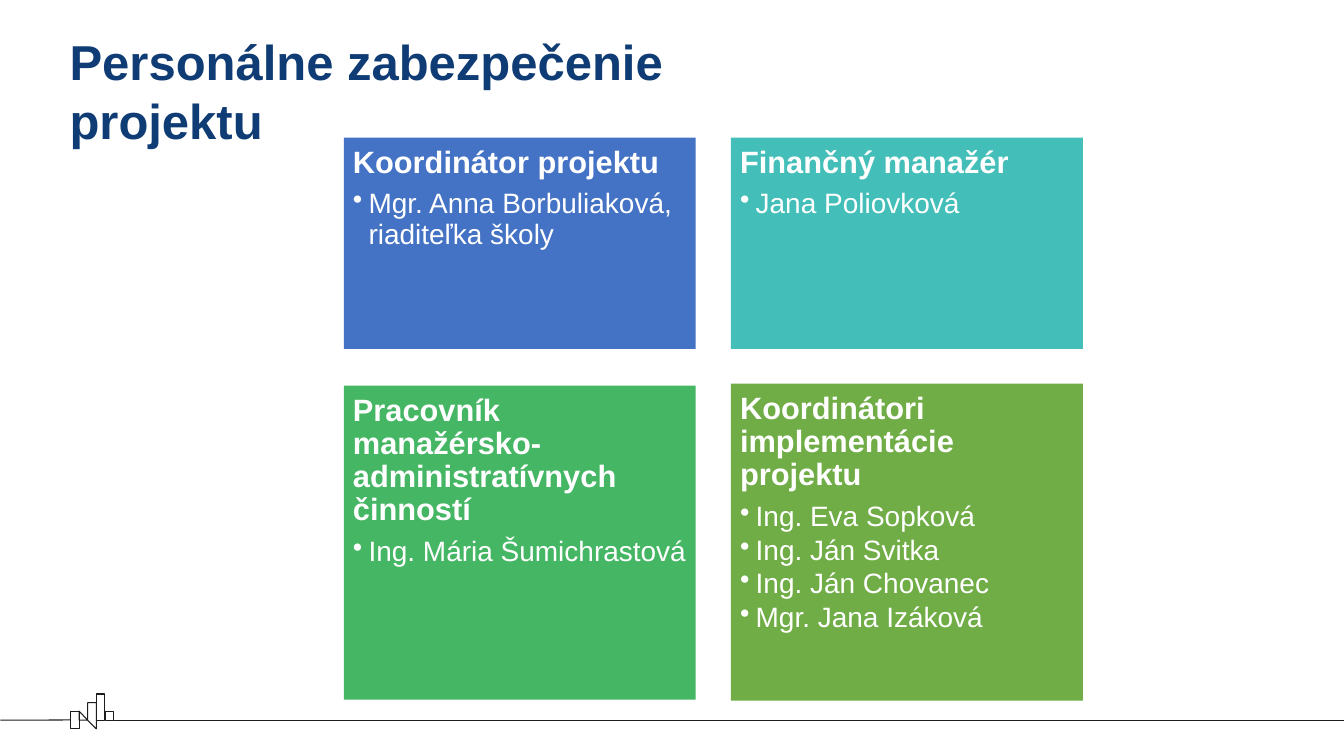
"""Build the project staffing slide with four role cards above a skyline footer."""
from lxml.etree import SubElement as Sub
from pptx import Presentation
from pptx.dml.color import RGBColor as RGB
from pptx.enum.shapes import MSO_CONNECTOR as Conn, MSO_SHAPE as Shape
from pptx.enum.text import MSO_ANCHOR as Anchor, MSO_AUTO_SIZE as Auto, PP_ALIGN as Align
from pptx.oxml.ns import qn
from pptx.util import Inches, Pt

COLORS = {
    "ink": "1D1E1C", "title": "0F3C74", "white": "FFFFFF", "blue": "4472C4",
    "teal": "43BEB9", "green": "45B664", "olive": "70AD47",
}


def style(par, size, color, bold):
    for run in par.runs:
        run.font.name = "Arial"
        run.font.size = Pt(size)
        run.font.bold = bold
        run.font.color.rgb = RGB.from_string(COLORS[color])


def outline(shape):
    shape.shadow.inherit = False
    shape.line.color.rgb = RGB.from_string(COLORS["ink"])
    shape.line.width = Pt(1.5)
    shape.fill.background()


prs = Presentation()
prs.slide_width, prs.slide_height = Inches(26.66), Inches(15)
slide = prs.slides.add_slide(prs.slide_layouts[5])
shapes = slide.shapes

towers = []
for left, top, height in [(2.09, 14.11, 0.18), (1.4, 14.11, 0.35), (1.91, 13.77, 0.52)]:
    tower = shapes.add_shape(
        Shape.RECTANGLE, Inches(left), Inches(top), Inches(0.17), Inches(height))
    outline(tower)
    towers.append(tower)

for points in [
    [(1.74, 14.29), (1.57, 14.29), (1.57, 14.11)],
    [(1.74, 13.94), (1.74, 14.29), (1.91, 14.46), (1.91, 13.94)],
]:
    corners = [(Inches(x), Inches(y)) for x, y in points]
    builder = shapes.build_freeform(*corners[0])
    builder.add_line_segments(corners[1:], close=True)
    outline(builder.convert_to_shape())

ground = []
for start, end in [(2.26, 26.66), (0.01, 1.4)]:
    line = shapes.add_connector(
        Conn.STRAIGHT, Inches(start), Inches(14.29), Inches(end), Inches(14.29))
    line.line.color.rgb = RGB.from_string(COLORS["ink"])
    line.line.width = Pt(1.5)
    Sub(line._element.spPr, qn("a:effectLst"))
    ground.append(line)
ground[1].end_connect(towers[1], 1)

title = shapes.title
title.left, title.top = Inches(1.38), Inches(0.61)
title.width, title.height = Inches(13.43), Inches(2.36)
frame = title.text_frame
frame.text = "Personálne zabezpečenie projektu"
frame.word_wrap = True
frame.auto_size = Auto.NONE
frame.vertical_anchor = Anchor.MIDDLE
frame.margin_left = frame.margin_right = frame.margin_top = frame.margin_bottom = 0
frame.paragraphs[0].alignment = Align.LEFT
style(frame.paragraphs[0], 70, "title", True)

cards = [
    (6.82, 2.73, 4.19, "blue", "Koordinátor projektu",
     ["Mgr. Anna Borbuliaková, riaditeľka školy"]),
    (14.5, 2.73, 4.19, "teal", "Finančný manažér", ["Jana Poliovková"]),
    (6.82, 7.65, 6.23, "green", "Pracovník manažérsko-administratívnych činností",
     ["Ing. Mária Šumichrastová"]),
    (14.5, 7.61, 6.29, "olive", "Koordinátori implementácie projektu",
     ["Ing. Eva Sopková", "Ing. Ján Svitka", "Ing. Ján Chovanec", "Mgr. Jana Izáková"]),
]
for left, top, height, color, role, people in cards:
    card = shapes.add_shape(
        Shape.RECTANGLE, Inches(left), Inches(top), Inches(6.98), Inches(height))
    card.shadow.inherit = False
    card.fill.solid()
    card.fill.fore_color.rgb = RGB.from_string(COLORS[color])
    card.line.fill.background()
    frame = card.text_frame
    frame.word_wrap = True
    frame.vertical_anchor = Anchor.TOP
    frame.margin_left = frame.margin_right = Inches(0.18)
    frame.margin_top = frame.margin_bottom = Inches(0.18)
    frame.text = "\n".join([role, *people])
    for i, par in enumerate(frame.paragraphs):
        par.alignment = Align.LEFT
        par.line_spacing = 0.9
        par.space_after = Pt(5 if i else 14)
        style(par, 40 if i else 44, "white", i == 0)
        if i:
            par.level = 1
            props = par._p.get_or_add_pPr()
            props.set("marL", str(Inches(0.31)))
            props.set("indent", str(Inches(-0.31)))
            Sub(props, qn("a:buChar")).set("char", "•")

prs.save("out.pptx")
